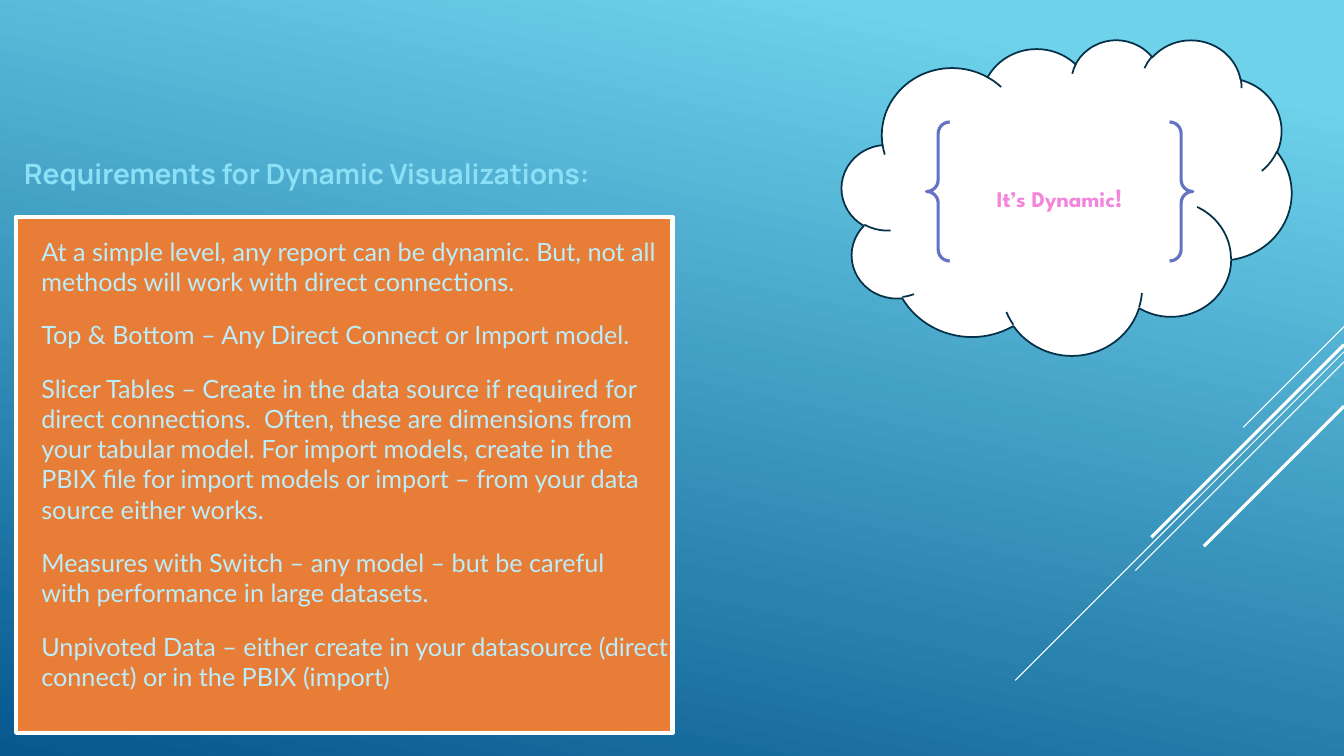
from lxml import etree
from pptx import Presentation
from pptx import util as u
from pptx.dml.color import RGBColor
from pptx.enum import shapes, text
from pptx.oxml import ns

WHITE = RGBColor(0xFF, 0xFF, 0xFF)
SKY = RGBColor(0x6E, 0xD2, 0xEB)
DEEP_BLUE = RGBColor(0x06, 0x58, 0x8E)
ORANGE = RGBColor(0xE8, 0x7D, 0x37)
PALE_BLUE = RGBColor(0xBB, 0xED, 0xFA)
HEADING_BLUE = RGBColor(0x8B, 0xE0, 0xF6)
NAVY = RGBColor(0x04, 0x31, 0x48)
VIOLET = RGBColor(0x64, 0x72, 0xC3)
PINK = RGBColor(0xF5, 0x85, 0xDB)

SLIDE_WIDTH, SLIDE_HEIGHT = 13.33, 7.5
GRADIENT_STOPS = [(0.1, SKY), (1, DEEP_BLUE)]

HEADING = "Requirements for Dynamic Visualizations:"
REQUIREMENTS = [
    ("At a simple level, any report can be dynamic. But, not all methods will work "
     "with direct connections.", 6.18, 2),
    ("Top & Bottom – Any Direct Connect or Import model.", 6.05, 1),
    ("Slicer Tables – Create in the data source if required for direct connections.  "
     "Often, these are dimensions from your tabular model. For import models, create "
     "in the PBIX file for import models or import – from your data source either "
     "works.", 6.18, 5),
    ("Measures with Switch – any model – but be careful with performance in large "
     "datasets.", 6.11, 2),
    ("Unpivoted Data – either create in your datasource (direct connect) or in the "
     "PBIX (import)", 6.25, 2),
]
CALLOUT = [("It’s Dynamic", 16), ("!", 18)]

REQUIREMENTS_LEFT, REQUIREMENTS_TOP = 0.41, 2.34
LINE_HEIGHT, REQUIREMENT_GAP = 0.3, 0.23

DIAGONALS = [
    (3.24, 1.0, 0.75),
    (3.49, 3.26, 0.75),
    (3.59, 2.07, 0.75),
    (3.42, 1.91, 2.25),
    (4.03, 1.39, 2.25),
]

HEADING_FORMAT = {"name": "Manrope", "size": u.Pt(20), "bold": True}
BODY_FORMAT = {"name": "Lato", "size": u.Pt(18)}
CALLOUT_FORMAT = {"name": "League Spartan", "bold": True}
FRAME_FORMAT = {"margin_left": 0, "margin_top": 0, "margin_right": 0,
                "margin_bottom": 0, "word_wrap": True,
                "auto_size": text.MSO_AUTO_SIZE.SHAPE_TO_FIT_TEXT}


def apply_format(target, values):
    for name, value in values.items():
        setattr(target, name, value)


def add_span(para, wording, values, color):
    span = para.add_run()
    span.text = wording
    apply_format(span.font, values)
    span.font.color.rgb = color


def add_diagonal(page, top, reach, weight):
    diagonal = page.shapes.add_connector(
        shapes.MSO_CONNECTOR.STRAIGHT, u.Inches(SLIDE_WIDTH), u.Inches(top),
        u.Inches(SLIDE_WIDTH - reach), u.Inches(top + reach))
    diagonal.line.color.rgb = WHITE
    diagonal.line.width = u.Pt(weight)
    etree.SubElement(diagonal.element.spPr, ns.qn("a:effectLst"))


def add_figure(page, kind, place, fill, line, weight):
    figure = page.shapes.add_shape(kind, *map(u.Inches, place))
    figure.shadow.inherit = False
    if fill is None:
        figure.fill.background()
    else:
        figure.fill.solid()
        figure.fill.fore_color.rgb = fill
    figure.line.color.rgb = line
    figure.line.width = u.Pt(weight)
    return figure


def add_text(page, place, wording, values, color):
    box = page.shapes.add_textbox(*map(u.Inches, place))
    apply_format(box.text_frame, FRAME_FORMAT)
    add_span(box.text_frame.paragraphs[0], wording, values, color)
    return box.text_frame


def main():
    deck = Presentation()
    deck.slide_width = u.Inches(SLIDE_WIDTH)
    deck.slide_height = u.Inches(SLIDE_HEIGHT)
    page = deck.slides.add_slide(deck.slide_layouts[6])

    backdrop = page.background.fill
    backdrop.gradient()
    backdrop.gradient_angle = 360 - 102
    for stop, (position, color) in zip(backdrop.gradient_stops, GRADIENT_STOPS):
        stop.position = position
        stop.color.rgb = color

    for diagonal in DIAGONALS:
        add_diagonal(page, *diagonal)

    kinds = shapes.MSO_SHAPE
    add_figure(page, kinds.RECTANGLE, (0.16, 2.15, 6.51, 5.12), ORANGE, WHITE, 3)

    heading = add_text(page, (0.24, 1.43, 6.29, 0.43), HEADING,
                       HEADING_FORMAT, HEADING_BLUE)
    heading.vertical_anchor = text.MSO_ANCHOR.MIDDLE
    heading.paragraphs[0].line_spacing = u.Pt(35)

    top = REQUIREMENTS_TOP
    for wording, width, lines in REQUIREMENTS:
        height = lines * LINE_HEIGHT
        add_text(page, (REQUIREMENTS_LEFT, top, width, height), wording,
                 BODY_FORMAT, PALE_BLUE)
        top += height + REQUIREMENT_GAP

    add_figure(page, kinds.CLOUD, (8.35, 0.39, 4.46, 3.13), WHITE, NAVY, 1.25)
    braces = add_figure(page, kinds.DOUBLE_BRACE, (9.19, 1.21, 2.64, 1.38),
                        None, VIOLET, 2.25)
    braces.text_frame.vertical_anchor = text.MSO_ANCHOR.MIDDLE
    para = braces.text_frame.paragraphs[0]
    para.alignment = text.PP_ALIGN.CENTER
    for wording, size in CALLOUT:
        add_span(para, wording, {**CALLOUT_FORMAT, "size": u.Pt(size)}, PINK)

    deck.save("out.pptx")


if __name__ == "__main__":
    main()
